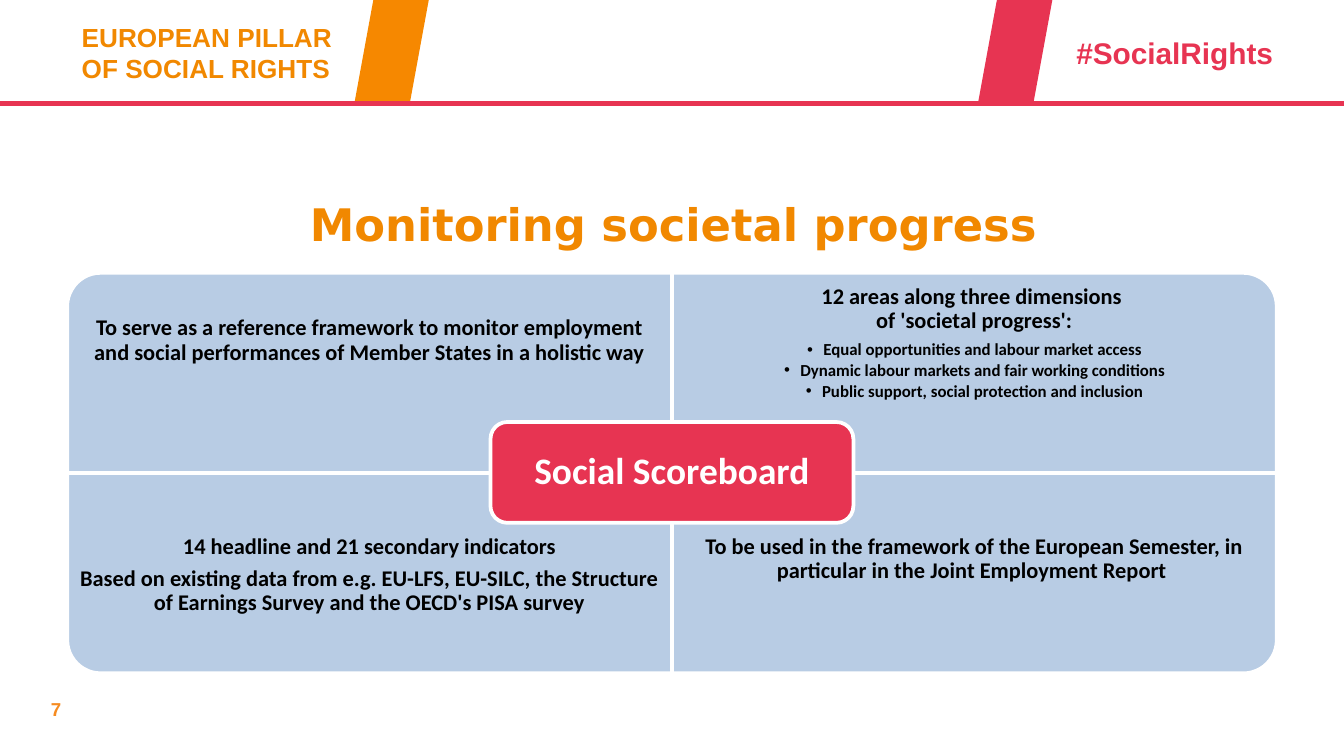
import pptx
import pptx.util
import pptx.dml.color
import pptx.enum.shapes
import pptx.enum.text
from dataclasses import dataclass
from lxml import etree

Inches, Pt = pptx.util.Inches, pptx.util.Pt
SHAPE = pptx.enum.shapes.MSO_SHAPE
ALIGN = pptx.enum.text.PP_ALIGN
ANCHOR = pptx.enum.text.MSO_ANCHOR
A = "{http://schemas.openxmlformats.org/drawingml/2006/main}"


@dataclass(frozen=True)
class Theme:
    orange: str = "F18800"
    band_orange: str = "F68800"
    number_orange: str = "F68B20"
    red: str = "E73452"
    panel: str = "B8CCE4"
    white: str = "FFFFFF"
    black: str = "000000"
    head_font: str = "Arial"
    title_font: str = "DejaVu Sans"
    body_font: str = "Calibri"
    number: int = 10
    brand: int = 14
    hashtag: int = 16
    title: int = 24
    body: int = 12
    bullet: int = 9
    hub: int = 20


def rgb(value):
    return pptx.dml.color.RGBColor.from_string(value)


class SlideBuilder:
    def __init__(self, slide, theme):
        self.s, self.theme = slide, theme

    def shape(self, kind, x, y, w, h, fill, outline=None, rotation=0):
        sp = self.s.shapes.add_shape(kind, Inches(x), Inches(y), Inches(w), Inches(h))
        sp.shadow.inherit = False
        sp.rotation = rotation
        sp.fill.solid()
        sp.fill.fore_color.rgb = rgb(fill)
        if outline:
            sp.line.color.rgb = rgb(outline)
            sp.line.width = Pt(2)
        else:
            sp.line.fill.background()
        return sp

    def rule(self, x1, y1, x2, y2, color, width):
        line = self.s.shapes.add_connector(
            pptx.enum.shapes.MSO_CONNECTOR.STRAIGHT,
            Inches(x1), Inches(y1), Inches(x2), Inches(y2))
        line.line.color.rgb = rgb(color)
        line.line.width = Pt(width)
        etree.SubElement(line._element.spPr, A + "effectLst")

    def box(self, x, y, w, h, inset=None, top=None, anchor=ANCHOR.TOP):
        tf = self.s.shapes.add_textbox(
            Inches(x), Inches(y), Inches(w), Inches(h)).text_frame
        tf.word_wrap = True
        tf.vertical_anchor = anchor
        if inset is not None:
            tf.margin_left = tf.margin_right = tf.margin_bottom = Inches(inset)
            tf.margin_top = Inches(inset if top is None else top)
        return tf

    def paragraph(self, tf, text, size, font, color, align=ALIGN.LEFT,
                  spacing=None, after=0, bullet=False):
        p = tf.paragraphs[0]
        if p.runs:
            p = tf.add_paragraph()
        p.alignment = align
        p.space_after = Pt(after)
        if spacing:
            p.line_spacing = spacing
        if bullet:
            pPr = p._p.get_or_add_pPr()
            pPr.set("marL", str(Inches(0.12)))
            pPr.set("indent", str(-Inches(0.12)))
            etree.SubElement(pPr, A + "buFont", typeface=self.theme.head_font)
            etree.SubElement(pPr, A + "buChar", char="•")
        for i, line in enumerate(text.split("\n")):
            if i:
                p.add_line_break()
            r = p.add_run()
            r.text = line
            r.font.size = Pt(size)
            r.font.name = font
            r.font.bold = True
            r.font.color.rgb = rgb(color)

    def label(self, text, x, y, w, h, size, font, color, **style):
        tf = self.box(x, y, w, h, anchor=style.pop("anchor", ANCHOR.TOP))
        self.paragraph(tf, text, size, font, color, **style)

    def panel(self, col, row, rotation):
        """One quadrant, turned so that its round corner faces outwards."""
        t = self.theme
        w, h = PANEL_W, PANEL_H
        cx, cy = LEFT + (col + 0.5) * w, TOP + (row + 0.5) * h
        if rotation % 180:
            w, h = h, w
        self.shape(SHAPE.ROUND_1_RECTANGLE, cx - w / 2, cy - h / 2, w, h,
                   t.panel, t.white, rotation)

    def panel_text(self, col, row, paragraphs, bullets=(), top=None):
        t = self.theme
        y = TOP if row == 0 else TOP + 2 * PANEL_H - TEXT_H
        tf = self.box(LEFT + col * PANEL_W, y, PANEL_W, TEXT_H, 0.09, top)
        for text in paragraphs:
            self.paragraph(tf, text, t.body, t.body_font, t.black,
                           ALIGN.CENTER, 0.9, 4.2)
        for text in bullets:
            self.paragraph(tf, text, t.bullet, t.body_font, t.black,
                           ALIGN.CENTER, 0.9, 1.35, bullet=True)


# Quadrant grid
LEFT, TOP = 0.5, 2.03
PANEL_W, PANEL_H, TEXT_H = 4.5, 1.49, 1.12
PANELS = [
    # column, row, rotation, paragraphs, bullets, top inset
    (0, 0, 270, ["To serve as a reference framework to monitor employment and "
                 "social performances of Member States in a holistic way"], [], 0.38),
    (1, 0, 0, ["12 areas along three dimensions \nof 'societal progress':"],
     ["Equal opportunities and labour market access",
      "Dynamic labour markets and fair working conditions",
      "Public support, social protection and inclusion"], None),
    (0, 1, 180, ["14 headline and 21 secondary indicators",
                 "Based on existing data from e.g. EU-LFS, EU-SILC, the Structure "
                 "of Earnings Survey and the OECD's PISA survey"], [], None),
    (1, 1, 90, ["To be used in the framework of the European Semester, in "
                "particular in the Joint Employment Report "], [], None),
]


def main():
    prs = pptx.Presentation()
    prs.slide_width = Inches(10)
    prs.slide_height = prs.slide_width * 9 // 16
    t = Theme()
    b = SlideBuilder(prs.slides.add_slide(prs.slide_layouts[6]), t)

    # Header and page number
    b.label("7", 0.28, 5.14, 2.18, 0.27, t.number, t.head_font, t.number_orange)
    b.label("EUROPEAN PILLAR \nOF SOCIAL RIGHTS", 0.51, 0.11, 2.54, 0.57,
            t.brand, t.head_font, t.orange)
    b.rule(0, 0.77, 10, 0.77, t.red, 2.25)
    b.label("#SocialRights", 7.91, 0.21, 1.73, 0.37, t.hashtag, t.head_font, t.red)
    for x, color in ((2.64, t.band_orange), (7.28, t.red)):
        b.shape(SHAPE.PARALLELOGRAM, x, 0, 0.55, 0.75, color)

    # Title
    b.label("Monitoring societal progress", 0.51, 1.28, 9, 0.77, t.title,
            t.title_font, t.orange, align=ALIGN.CENTER, anchor=ANCHOR.MIDDLE)

    # Quadrants
    for col, row, rotation, paragraphs, bullets, top in PANELS:
        b.panel(col, row, rotation)
        b.panel_text(col, row, paragraphs, bullets, top)

    # Centre hub
    hub = b.shape(SHAPE.ROUNDED_RECTANGLE, 3.65, 3.14, 2.7, 0.75, t.red, t.white)
    hub.text_frame.vertical_anchor = ANCHOR.MIDDLE
    b.paragraph(hub.text_frame, "Social Scoreboard", t.hub, t.body_font, t.white,
                ALIGN.CENTER, 0.9)

    prs.save("out.pptx")


if __name__ == "__main__":
    main()
